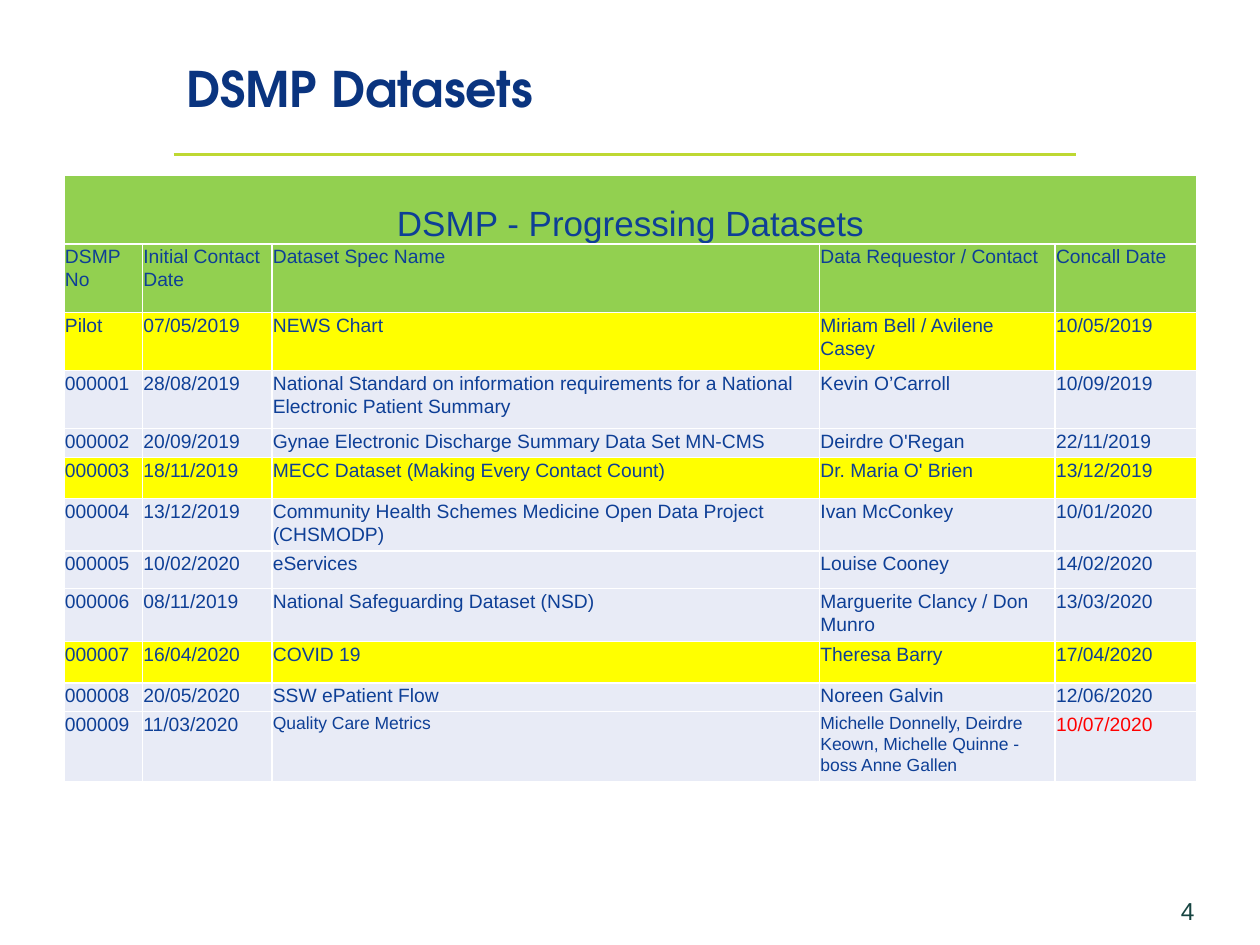
"""Build the DSMP Datasets slide with its table of progressing datasets."""
import pptx
import pptx.dml.color
import pptx.enum.shapes
import pptx.enum.text
import pptx.oxml.ns
import pptx.util
from lxml import etree

Cm, Pt = pptx.util.Cm, pptx.util.Pt
PP_ALIGN, MSO_ANCHOR = pptx.enum.text.PP_ALIGN, pptx.enum.text.MSO_ANCHOR
COLORS = {
    "title": "0A347F",
    "rule": "BED832",
    "number": "164441",
    "text": "0E3F96",
    "alert": "FF0000",
    "header": "92D050",
    "highlight": "FFFF00",
    "plain": "E8EBF6",
}
HEADERS = ["DSMP No", "Initial Contact Date", "Dataset Spec Name", "Data Requestor / Contact", "Concall Date"]
DATASETS = [
    ["Pilot", "07/05/2019", "NEWS Chart", "Miriam Bell / Avilene Casey", "10/05/2019"],
    ["000001", "28/08/2019", "National Standard on information requirements for a National Electronic Patient Summary",
     "Kevin O’Carroll", "10/09/2019"],
    ["000002", "20/09/2019", "Gynae Electronic Discharge Summary Data Set MN-CMS", "Deirdre O'Regan", "22/11/2019"],
    ["000003", "18/11/2019", "MECC Dataset (Making Every Contact Count)", "Dr. Maria O' Brien", "13/12/2019"],
    ["000004", "13/12/2019", "Community Health Schemes Medicine Open Data Project (CHSMODP)",
     "Ivan McConkey", "10/01/2020"],
    ["000005", "10/02/2020", "eServices", "Louise Cooney", "14/02/2020"],
    ["000006", "08/11/2019", "National Safeguarding Dataset (NSD)", "Marguerite Clancy / Don Munro", "13/03/2020"],
    ["000007", "16/04/2020", "COVID 19", "Theresa Barry", "17/04/2020"],
    ["000008", "20/05/2020", "SSW ePatient Flow", "Noreen Galvin", "12/06/2020"],
    ["000009", "11/03/2020", "Quality Care Metrics",
     "Michelle Donnelly, Deirdre Keown, Michelle Quinne - boss Anne Gallen", "10/07/2020"],
]
HIGHLIGHTED = {"Pilot", "000003", "000007"}
COL_WIDTHS = [1.58, 2.61, 11.04, 4.75, 2.86]
ROW_HEIGHTS = [1.38, 1.38, 1.17, 1.17, 0.58, 0.83, 1.06, 0.76, 1.06, 0.84, 0.58, 1.42]


def style_font(p, size, color, name="Arial", bold=False):
    p.font.size = Pt(size)
    p.font.name = name
    p.font.bold = bold
    p.font.color.rgb = pptx.dml.color.RGBColor.from_string(COLORS[color])


def fill_cell(cell, text, fill, size=11, color="text", space_after=8):
    cell.fill.solid()
    cell.fill.fore_color.rgb = pptx.dml.color.RGBColor.from_string(COLORS[fill])
    cell.margin_left = cell.margin_right = cell.margin_top = Cm(0.02)
    cell.margin_bottom = 0
    p = cell.text_frame.paragraphs[0]
    p.text = text
    p.line_spacing = 1.07
    p.space_after = Pt(space_after)
    style_font(p, size, color)
    return p


prs = pptx.Presentation()
prs.slide_width, prs.slide_height = Cm(25.4), Cm(19.05)
s = prs.slides.add_slide(prs.slide_layouts[5])

rule = s.shapes.add_connector(
    pptx.enum.shapes.MSO_CONNECTOR.STRAIGHT, Cm(3.5), Cm(3.12), Cm(21.7), Cm(3.12))
rule.line.width = Pt(1.75)
rule.line.color.rgb = pptx.dml.color.RGBColor.from_string(COLORS["rule"])
etree.SubElement(rule._element.spPr, pptx.oxml.ns.qn("a:effectLst"))

title = s.shapes.title
title.left, title.top, title.width, title.height = Cm(3.5), Cm(0.43), Cm(18.2), Cm(2.69)
tf = title.text_frame
tf.vertical_anchor = MSO_ANCHOR.MIDDLE
p = tf.paragraphs[0]
p.text = "DSMP Datasets"
p.alignment = PP_ALIGN.LEFT
style_font(p, 28, "title", "TeX Gyre Adventor", True)

number = s.shapes.add_textbox(Cm(22.3), Cm(17.93), Cm(2.03), Cm(0.8))
tf = number.text_frame
tf.word_wrap = True
p = tf.paragraphs[0]
p.text = "4"
p.alignment = PP_ALIGN.RIGHT
style_font(p, 14, "number")

table = s.shapes.add_table(
    len(ROW_HEIGHTS), len(COL_WIDTHS), Cm(1.29), Cm(3.54), Cm(sum(COL_WIDTHS)), Cm(sum(ROW_HEIGHTS))).table
table.first_row = table.horz_banding = False
for column, width in zip(table.columns, COL_WIDTHS):
    column.width = Cm(width)
for row, height in zip(table.rows, ROW_HEIGHTS):
    row.height = Cm(height)

banner = table.cell(0, 0)
banner.merge(table.cell(0, len(COL_WIDTHS) - 1))
banner.vertical_anchor = MSO_ANCHOR.BOTTOM
fill_cell(banner, "DSMP - Progressing Datasets", "header", 20).alignment = PP_ALIGN.CENTER

for c, text in enumerate(HEADERS):
    fill_cell(table.cell(1, c), text, "header")
for r, dataset in enumerate(DATASETS, start=2):
    fill = "highlight" if dataset[0] in HIGHLIGHTED else "plain"
    for c, text in enumerate(dataset):
        fill_cell(table.cell(r, c), text, fill)

last = len(ROW_HEIGHTS) - 1
for c in (2, 3):
    fill_cell(table.cell(last, c), DATASETS[-1][c], "plain", 10, space_after=0)
fill_cell(table.cell(last, 4), DATASETS[-1][4], "plain", color="alert")

prs.save("out.pptx")
